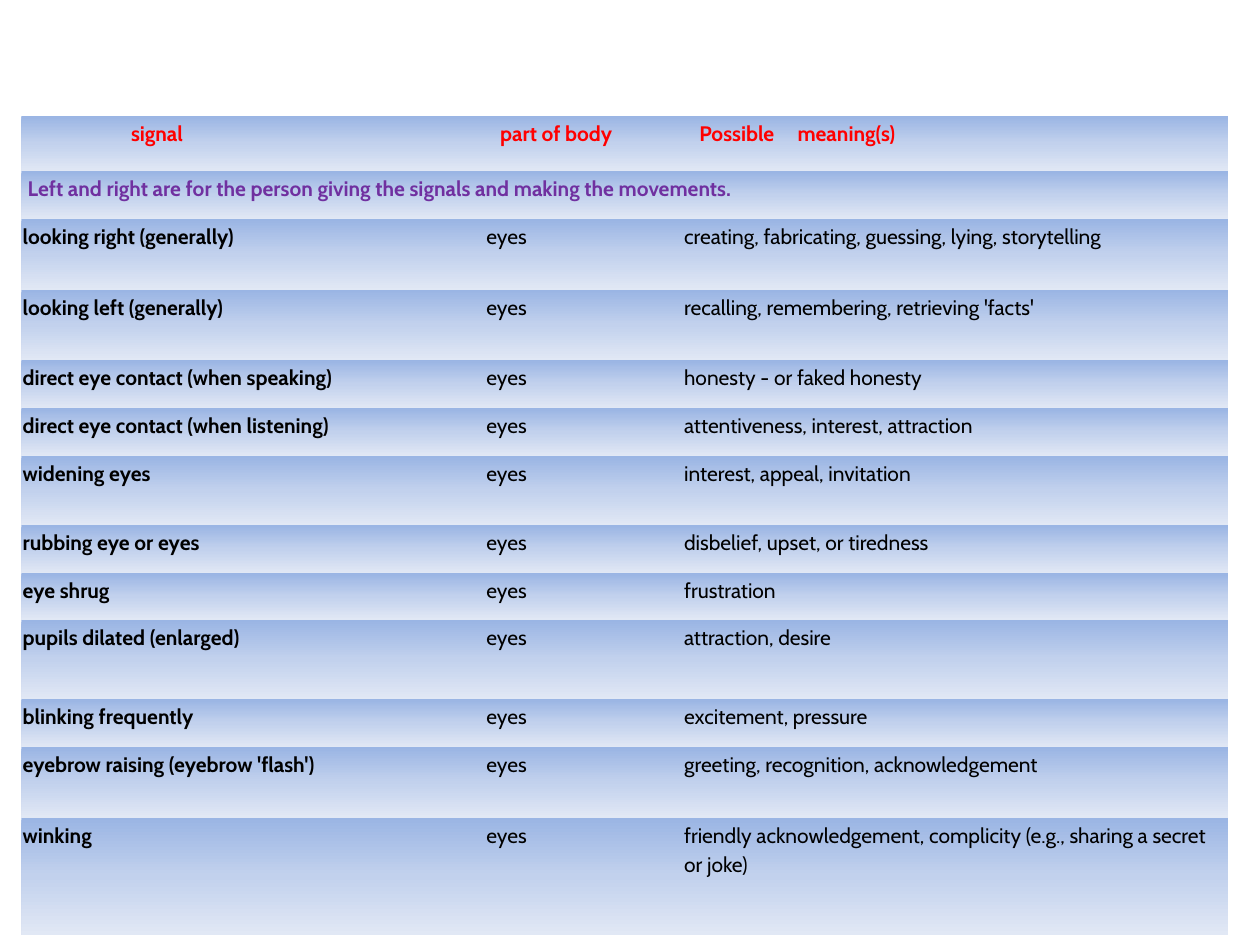
from dataclasses import dataclass

from lxml import etree
from pptx import Presentation
from pptx.dml.color import RGBColor
from pptx.oxml.ns import qn
from pptx.util import Inches, Pt


@dataclass(frozen=True)
class Theme:
    font: str = "Cabin"
    size: int = 12
    line: float = 1.15
    pad: float = 0.01
    head: str = "FF0000"
    note: str = "7030A0"
    body: str = "000000"
    fade: tuple = ((0, "9AB5E4"), (50, "C2D1ED"), (100, "E1E8F5"))
    plain: str = "{2D5ABB26-0587-4C30-8999-92F81FD0307C}"


@dataclass(frozen=True)
class Signal:
    name: str
    sense: str
    high: float
    organ: str = "eyes"


THEME = Theme()
LEFT, TOP = 0.17, 0.92
WIDTHS = (3.68, 1.57, 4.33)
HEAD_HIGH, NOTE_HIGH = 0.44, 0.38
HEADS = (("signal", 0.87), ("part of body", 0.12), ("Possible\tmeaning(s)", 0.13))
HEAD_TAB = 0.78
NOTE = "Left and right are for the person giving the signals and making the movements."
SIGNALS = (
    Signal("looking right (generally)",
           "creating, fabricating, guessing, lying, storytelling", 0.56),
    Signal("looking left (generally)",
           "recalling, remembering, retrieving 'facts'", 0.56),
    Signal("direct eye contact (when speaking)", "honesty - or faked honesty", 0.38),
    Signal("direct eye contact (when listening)",
           "attentiveness, interest, attraction", 0.38),
    Signal("widening eyes", "interest, appeal, invitation", 0.55),
    Signal("rubbing eye or eyes", "disbelief, upset, or tiredness", 0.38),
    Signal("eye shrug", "frustration", 0.37),
    Signal("pupils dilated (enlarged)", "attraction, desire", 0.63),
    Signal("blinking frequently", "excitement, pressure", 0.38),
    Signal("eyebrow raising (eyebrow 'flash')",
           "greeting, recognition, acknowledgement", 0.56),
    Signal("winking",
           "friendly acknowledgement, complicity (e.g., sharing a secret or joke)", 0.93),
)


def shade(cell) -> None:
    """Fill a cell with the three-stop fade, running downwards."""
    grad = etree.SubElement(cell._tc.get_or_add_tcPr(), qn("a:gradFill"))
    stops = etree.SubElement(grad, qn("a:gsLst"))
    for place, color in THEME.fade:
        stop = etree.SubElement(stops, qn("a:gs"), pos=str(place * 1000))
        etree.SubElement(stop, qn("a:srgbClr"), val=color)
    etree.SubElement(grad, qn("a:lin"), ang="5400000", scaled="0")


def add_tab(para, place: float) -> None:
    tabs = etree.SubElement(para._p.get_or_add_pPr(), qn("a:tabLst"))
    etree.SubElement(tabs, qn("a:tab"), pos=str(Inches(place)), algn="l")


def write(cell, text: str, color: str, bold: bool, left: float = THEME.pad) -> None:
    shade(cell)
    cell.margin_left = Inches(left)
    cell.margin_top = cell.margin_right = cell.margin_bottom = Inches(THEME.pad)
    para = cell.text_frame.paragraphs[0]
    para.line_spacing = THEME.line
    if "\t" in text:
        add_tab(para, HEAD_TAB)
    run = para.add_run()
    run.text = text
    run.font.name = THEME.font
    run.font.size = Pt(THEME.size)
    run.font.bold = bold
    run.font.color.rgb = RGBColor.from_string(color)


def add_grid(slide):
    """Add the bare table with its column widths and row heights."""
    highs = [HEAD_HIGH, NOTE_HIGH] + [signal.high for signal in SIGNALS]
    frame = slide.shapes.add_table(
        len(highs), len(WIDTHS), Inches(LEFT), Inches(TOP),
        Inches(sum(WIDTHS)), Inches(sum(highs)))
    table = frame.table
    table.first_row = table.horz_banding = False
    table._tbl.tblPr.find(qn("a:tableStyleId")).text = THEME.plain
    for column, width in zip(table.columns, WIDTHS):
        column.width = Inches(width)
    for row, high in zip(table.rows, highs):
        row.height = Inches(high)
    return table


def main() -> None:
    deck = Presentation()
    deck.slide_width, deck.slide_height = Inches(10), Inches(7.5)
    slide = deck.slides.add_slide(deck.slide_layouts[6])
    table = add_grid(slide)
    for col, (text, left) in enumerate(HEADS):
        write(table.cell(0, col), text, THEME.head, True, left)
    note = table.cell(1, 0)
    note.merge(table.cell(1, len(WIDTHS) - 1))
    write(note, NOTE, THEME.note, True, 0.05)
    for row, signal in enumerate(SIGNALS, start=2):
        for col, text in enumerate((signal.name, signal.organ, signal.sense)):
            write(table.cell(row, col), text, THEME.body, col == 0)
    deck.save("out.pptx")


if __name__ == "__main__":
    main()
